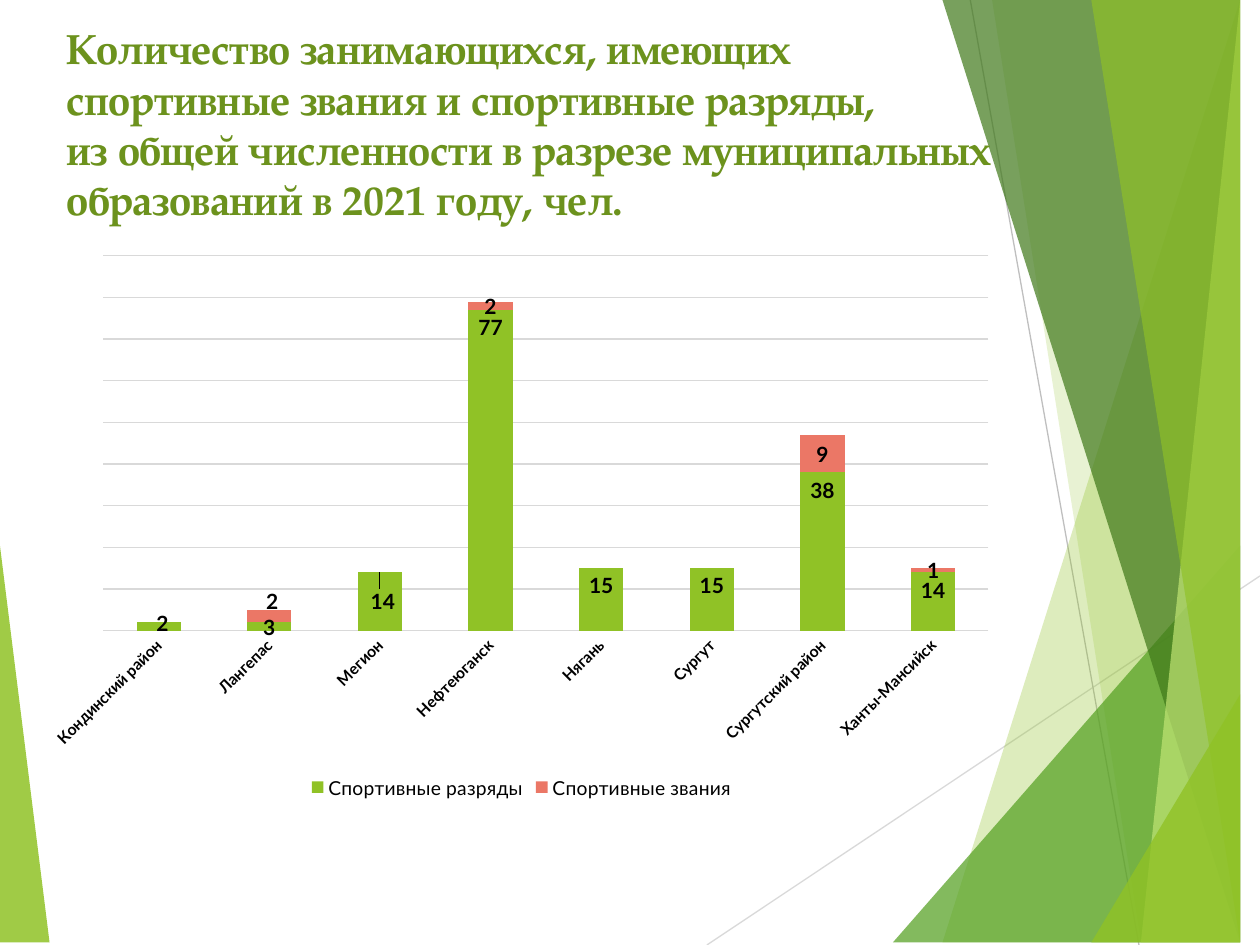
from dataclasses import dataclass

from lxml.etree import SubElement
from pptx import Presentation
from pptx.chart.data import CategoryChartData
from pptx.dml.color import RGBColor
from pptx.enum.chart import (XL_CHART_TYPE, XL_LABEL_POSITION,
                             XL_LEGEND_POSITION, XL_TICK_MARK)
from pptx.enum.shapes import MSO_CONNECTOR
from pptx.enum.text import MSO_ANCHOR, MSO_AUTO_SIZE, PP_ALIGN
from pptx.oxml import parse_xml
from pptx.oxml.ns import nsdecls, qn
from pptx.util import Cm, Pt


@dataclass
class Theme:
    lime: str = "90C226"
    green: str = "54A021"
    dark: str = "3F7819"
    pale: str = "C0E474"
    coral: str = "EB7766"
    head: str = "6C921D"
    ink: str = "000000"
    grid: str = "D9D9D9"
    gray: str = "BFBFBF"
    serif: str = "TeX Gyre Pagella"
    sans: str = "Lato"
    title: int = 24
    label: int = 12
    key: int = 11
    base: int = 10
    tick: int = 9


theme = Theme()


def style(font, size, bold=False, color=theme.ink, face=theme.sans):
    font.size = Pt(size)
    font.bold = bold
    font.name = face
    font.color.rgb = RGBColor.from_string(color)


def shift(label, dx, dy):
    label._dLbl.insert(1, parse_xml(
        f'<c:layout {nsdecls("c")}><c:manualLayout>'
        f'<c:x val="{dx}"/><c:y val="{dy}"/>'
        '</c:manualLayout></c:layout>'))


wide, high = 25.4, 19.05
deck = Presentation()
deck.slide_width, deck.slide_height = Cm(wide), Cm(high)
slide = deck.slides.add_slide(deck.slide_layouts[5])
shapes = slide.shapes

lines = [
    ((14.25, high), (wide, 11.61), theme.grid),
    ((19.56, 0), (22.96, high), theme.gray),
]
for start, end, color in lines:
    line = shapes.add_connector(MSO_CONNECTOR.STRAIGHT,
                                *map(Cm, start + end))
    line.line.color.rgb = RGBColor.from_string(color)
    line.line.width = Pt(0.75)
    SubElement(line._element.spPr, qn("a:effectLst"))

foot, top = (wide, high), (wide, 0)
facets = [
    ([(0, 11.15), (1.24, high), (0, high)], theme.lime, 85),
    ([(24.77, 0), (19.15, high), foot, top], theme.lime, 30),
    ([(20.02, 0), (23.34, high), foot, top], theme.lime, 20),
    ([(18.44, high), (wide, 10.9), foot], theme.green, 72),
    ([(19.48, 0), (24.64, high), foot, top], theme.dark, 70),
    ([(24.92, 0), (23.04, high), foot, top], theme.pale, 70),
    ([(22.43, 0), (25.04, high), foot, (25.35, 0)], theme.lime, 65),
    ([(22.38, high), (wide, 13.59), foot], theme.lime, 80),
]
for points, color, alpha in facets:
    pen = shapes.build_freeform(*points[0], scale=Cm(1))
    pen.add_line_segments(points[1:], close=True)
    facet = pen.convert_to_shape()
    facet.shadow.inherit = False
    facet.line.fill.background()
    facet.fill.solid()
    facet.fill.fore_color.rgb = RGBColor.from_string(color)
    tint = facet._element.spPr.find(".//" + qn("a:srgbClr"))
    SubElement(tint, qn("a:alpha"), val=str(alpha * 1000))

title = shapes.title
title.left, title.top = Cm(1.09), Cm(0.33)
title.width, title.height = Cm(19.81), Cm(3.18)
shapes._spTree.append(title._element)
frame = title.text_frame
frame.word_wrap = True
frame.auto_size = MSO_AUTO_SIZE.NONE
frame.vertical_anchor = MSO_ANCHOR.TOP
para = frame.paragraphs[0]
para.alignment = PP_ALIGN.LEFT
rows = [
    "Количество занимающихся, имеющих ",
    "спортивные звания и спортивные разряды, ",
    "из общей численности в разрезе муниципальных образований в 2021 году, чел.",
]
for i, row in enumerate(rows):
    if i:
        para.add_line_break()
    run = para.add_run()
    run.text = row
    style(run.font, theme.title, True, theme.head, theme.serif)

data = CategoryChartData()
data.categories = ["Кондинский район", "Лангепас", "Мегион", "Нефтеюганск",
                   "Нягань", "Сургут", "Сургутский район", "Ханты-Мансийск"]
data.add_series("Спортивные разряды", [2, 2, 14, 77, 15, 15, 38, 14])
data.add_series("Спортивные звания",
                [None, 3, None, 2, None, None, 9, 1])
chart = shapes.add_chart(XL_CHART_TYPE.COLUMN_STACKED, Cm(0.71), Cm(4.93),
                         Cm(19.61), Cm(11.28), data).chart
style(chart.font, theme.base)
chart.has_title = False
chart.has_legend = True
chart.legend.position = XL_LEGEND_POSITION.BOTTOM
chart.legend.include_in_layout = False
style(chart.legend.font, theme.key)

plot = chart.plots[0]
plot.gap_width, plot.overlap = 150, 100
plot.vary_by_categories = False
area = chart._chartSpace.chart.plotArea
for old in area.findall(qn("c:layout")):
    area.remove(old)
area.insert(0, parse_xml(
    f'<c:layout {nsdecls("c")}><c:manualLayout>'
    '<c:layoutTarget val="inner"/><c:xMode val="edge"/><c:yMode val="edge"/>'
    '<c:x val="0.07"/><c:y val="0.02"/><c:w val="0.91"/><c:h val="0.67"/>'
    '</c:manualLayout></c:layout>'))

axis = chart.category_axis
axis.major_tick_mark = XL_TICK_MARK.NONE
style(axis.tick_labels.font, theme.tick, True)
axis._element.txPr.bodyPr.set("rot", "-2700000")
scale = chart.value_axis
scale.visible = False
scale.minimum_scale, scale.maximum_scale, scale.major_unit = 0, 90, 10
scale.has_major_gridlines = True
for rule in (axis.format.line, scale.major_gridlines.format.line):
    rule.color.rgb = RGBColor.from_string(theme.grid)
    rule.width = Pt(0.75)

looks = [
    (theme.lime, XL_LABEL_POSITION.INSIDE_END,
     {0: (0.004, -0.03), 1: (0.003, -0.07), 2: (0.003, 0.02)}),
    (theme.coral, XL_LABEL_POSITION.CENTER, {1: (0, 0.02)}),
]
for part, (color, place, moves) in zip(plot.series, looks):
    part.format.fill.solid()
    part.format.fill.fore_color.rgb = RGBColor.from_string(color)
    part.data_labels.show_value = True
    part.data_labels.position = place
    style(part.data_labels.font, theme.label, True)
    for i, move in moves.items():
        label = part.points[i].data_label
        style(label.font, theme.label, True)
        label.position = place
        shift(label, *move)

deck.save("out.pptx")
